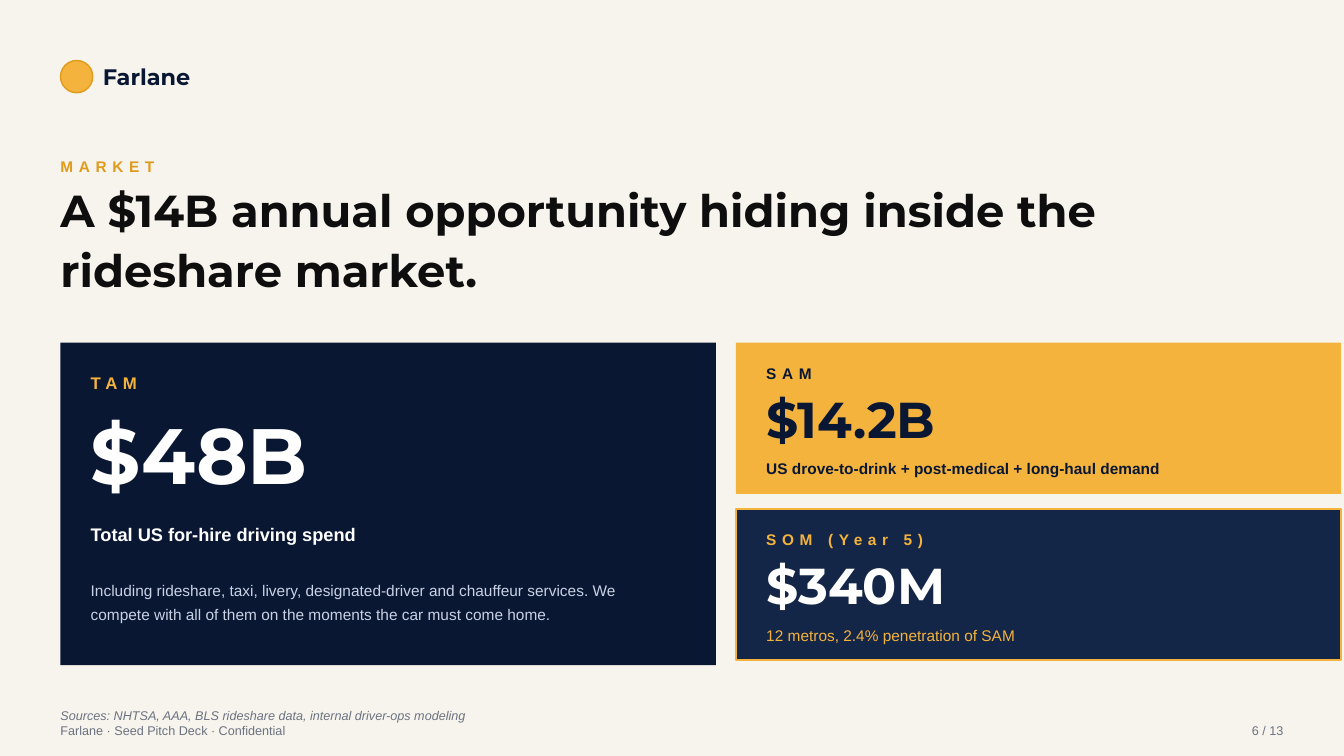
from pptx import Presentation
from pptx import util as u
from pptx.dml.color import RGBColor
from pptx.enum import shapes, text

PX = 9144  # EMU per px, 100 px to the inch
NAVY, DEEP, AMBER, GOLD = "0A1733", "142647", "F4B33C", "E09B1A"
WHITE, INK, MIST, GREY, CREAM = "FFFFFF", "0E0E0E", "C9D2E5", "6B7280", "F7F4ED"
HEAD, BODY = "Montserrat", "Arial"
BRAND = "Farlane"


def rgb(value):
    return RGBColor.from_string(value)


def px(*lengths):
    return [u.Emu(n * PX) for n in lengths]


def write(sp, words, size, color, font=BODY, bold=False, italic=False,
          tracking=0, spacing=None, align=text.PP_ALIGN.LEFT):
    tf = sp.text_frame
    tf.word_wrap = True
    tf.auto_size = text.MSO_AUTO_SIZE.NONE
    tf.vertical_anchor = text.MSO_ANCHOR.MIDDLE
    tf.margin_left = tf.margin_top = tf.margin_right = tf.margin_bottom = 0
    p = tf.paragraphs[0]
    p.alignment = align
    if spacing:
        p.line_spacing = spacing
    r = p.add_run()
    r.text = words
    r.font.name, r.font.size = font, u.Pt(size)
    r.font.bold, r.font.italic = bold, italic
    r.font.color.rgb = rgb(color)
    if tracking:
        r._r.get_or_add_rPr().set("spc", str(tracking * 100))


def label(s, box, words, size, color, **style):
    write(s.shapes.add_textbox(*px(*box)), words, size, color, **style)


def block(s, kind, box, fill, line=None):
    sp = s.shapes.add_shape(kind, *px(*box))
    sp.shadow.inherit = False
    sp.fill.solid()
    sp.fill.fore_color.rgb = rgb(fill)
    if line:
        sp.line.color.rgb = rgb(line)
        sp.line.width = u.Pt(1)
    else:
        sp.line.fill.background()


def header(s, x, y):
    # Brand mark and name
    block(s, shapes.MSO_SHAPE.OVAL, (x, y, 32, 32), AMBER, GOLD)
    label(s, (x + 42, y - 2, 150, 36), BRAND, 16, NAVY, font=HEAD, bold=True)
    # Section name and headline
    label(s, (x, y + 90, 600, 30), "MARKET", 11, GOLD, bold=True, tracking=4)
    title = s.shapes.title
    title.left, title.top, title.width, title.height = px(x, y + 125, 1200, 100)
    write(title, "A $14B annual opportunity hiding inside the rideshare market.",
          32, INK, font=HEAD, bold=True, spacing=1.1)


def total_card(s, x, y, w, h):
    block(s, shapes.MSO_SHAPE.RECTANGLE, (x, y, w, h), NAVY)
    x += 30
    label(s, (x, y + 20, 200, 40), "TAM", 12, AMBER, bold=True, tracking=4)
    label(s, (x, y + 55, 500, 110), "$48B", 56, WHITE, font=HEAD, bold=True)
    label(s, (x, y + 170, 550, 40), "Total US for-hire driving spend", 13, WHITE,
          bold=True)
    label(s, (x, y + 205, 580, 100),
          "Including rideshare, taxi, livery, designated-driver and chauffeur services. "
          "We compete with all of them on the moments the car must come home.",
          11, MIST, spacing=1.3)


def segment_card(s, x, y, w, h, name, amount, detail, fill, line, accent,
                 amount_color, bold):
    block(s, shapes.MSO_SHAPE.RECTANGLE, (x, y, w, h), fill, line)
    x += 30
    label(s, (x, y + 15, 300, 30), name, 11, accent, bold=True, tracking=4)
    label(s, (x, y + 40, 500, 70), amount, 36, amount_color, font=HEAD, bold=True)
    label(s, (x, y + 105, 550, 40), detail, 11, accent, bold=bold)


def footer(s, x, y, w):
    label(s, (x, y, 800, 30),
          "Sources: NHTSA, AAA, BLS rideshare data, internal driver-ops modeling",
          9, GREY, italic=True)
    label(s, (x, y + 15, 800, 30), f"{BRAND} · Seed Pitch Deck · Confidential", 9, GREY)
    label(s, (x + w - 100, y + 15, 100, 30), "6 / 13", 9, GREY,
          align=text.PP_ALIGN.RIGHT)


def main():
    prs = Presentation()
    prs.slide_width, prs.slide_height = px(1333, 750)
    s = prs.slides.add_slide(prs.slide_layouts[5])
    s.background.fill.solid()
    s.background.fill.fore_color.rgb = rgb(CREAM)

    header(s, 60, 60)
    total_card(s, 60, 340, 650, 320)

    # Stacked market segments
    segments = [
        ("SAM", "$14.2B", "US drove-to-drink + post-medical + long-haul demand",
         AMBER, None, NAVY, NAVY, True),
        ("SOM (Year 5)", "$340M", "12 metros, 2.4% penetration of SAM",
         DEEP, AMBER, AMBER, WHITE, False),
    ]
    for i, segment in enumerate(segments):
        segment_card(s, 730, 340 + i * 165, 600, 150, *segment)

    footer(s, 60, 695, 1213)
    prs.save("out.pptx")


if __name__ == "__main__":
    main()
